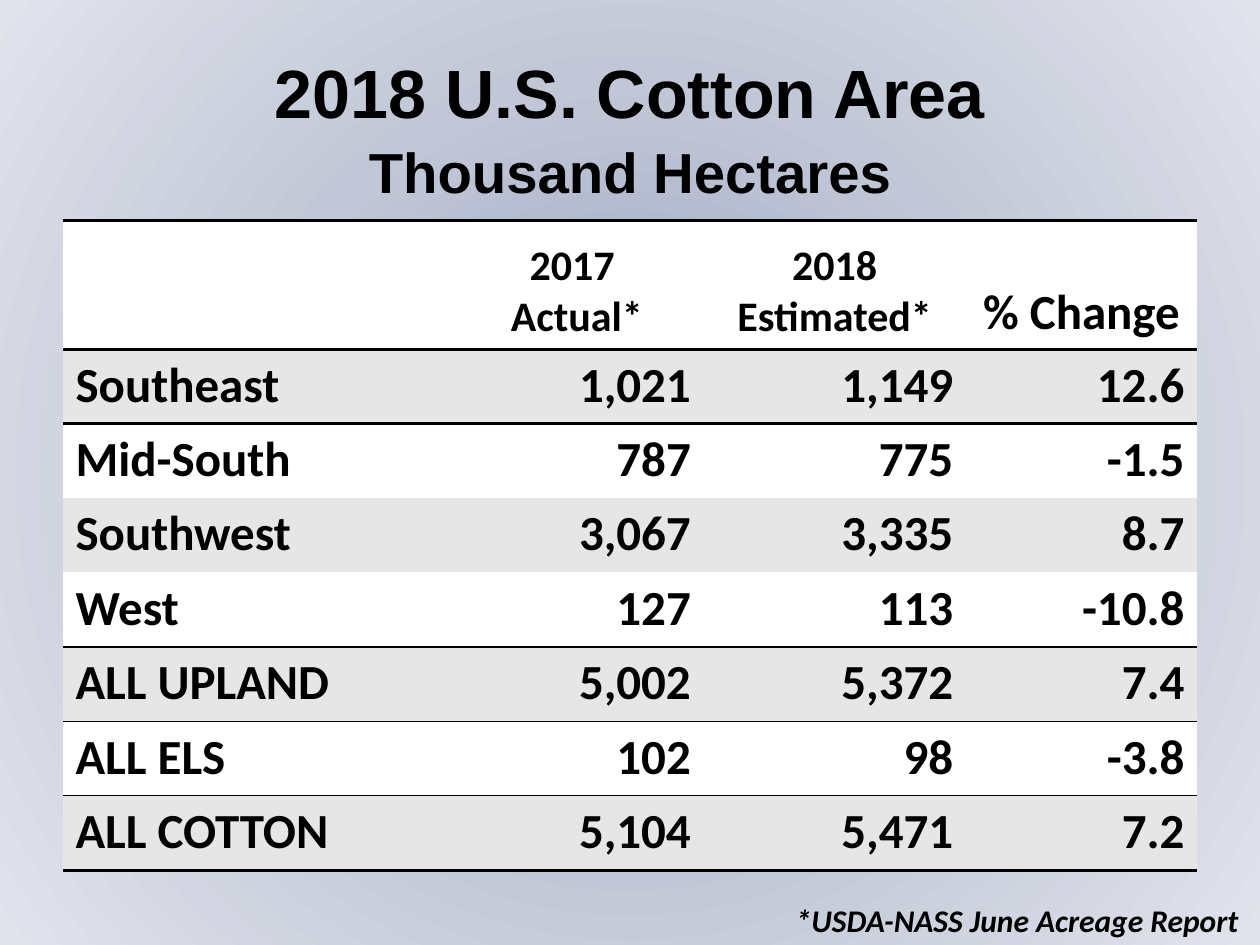
from pptx import Presentation
from pptx.dml.color import RGBColor
from pptx.enum.text import MSO_ANCHOR as Anchor, PP_ALIGN as Align
from pptx.oxml import parse_xml
from pptx.oxml.ns import nsdecls, qn
from pptx.util import Cm, Pt

COLORS = {"ink": "000000", "plain": "FFFFFF", "band": "E6E6E6",
          "center": "98A3C1", "middle": "C2C7D7", "edge": "E1E4EB"}
NO_STYLE = "{2D5ABB26-0587-4C30-8999-92F81FD0307C}"
HEADER = ["", "2017\n Actual*", "2018 Estimated*", "% Change"]
REGIONS = [
    ["Southeast", "1,021", "1,149", "12.6"],
    ["Mid-South", "787", "775", "-1.5"],
    ["Southwest", "3,067", "3,335", "8.7"],
    ["West", "127", "113", "-10.8"],
    ["ALL UPLAND", "5,002", "5,372", "7.4"],
    ["ALL ELS", "102", "98", "-3.8"],
    ["ALL COTTON", "5,104", "5,471", "7.2"],
]
COLUMN_WIDTHS = [7.62, 5.29, 5.29, 4.66]
HEADER_HEIGHT, ROW_HEIGHT = 2.59, 1.5
RULES = {0: 2, 1: 2, 5: 1, 7: 1, 8: 2}


def apply_format(target, values):
    for name, value in values.items():
        setattr(target, name, value)


def write_text(para, text, align, size, font, **extra):
    para.alignment = align
    span = para.add_run()
    span.text = text
    apply_format(span.font, {"size": Pt(size), "name": font, "bold": True, **extra})
    span.font.color.rgb = RGBColor.from_string(COLORS["ink"])


def add_frame(page, box, **values):
    frame = page.shapes.add_textbox(*map(Cm, box)).text_frame
    apply_format(frame, {"word_wrap": True, **values})
    return frame


def paint_background(page):
    page.background.fill.solid()
    properties = page._element.find(".//" + qn("p:bgPr"))
    stops = "".join(
        f'<a:gs pos="{place * 1000}"><a:srgbClr val="{COLORS[name]}"/></a:gs>'
        for place, name in [(0, "center"), (50, "middle"), (100, "edge")])
    gradient = parse_xml(
        f'<a:gradFill {nsdecls("a")} rotWithShape="1"><a:gsLst>{stops}</a:gsLst>'
        '<a:path path="circle"><a:fillToRect l="50000" t="50000" r="50000" b="50000"/>'
        '</a:path></a:gradFill>')
    properties.replace(properties[0], gradient)


def add_title(page, box):
    frame = add_frame(page, box, margin_top=Cm(0.25), vertical_anchor=Anchor.TOP)
    write_text(frame.paragraphs[0], "2018 U.S. Cotton Area", Align.CENTER, 39, "Arial")
    subtitle = frame.add_paragraph()
    subtitle.space_before = Pt(3)
    write_text(subtitle, "Thousand Hectares", Align.CENTER, 32.2, "Arial")


def add_rule(cell, side, weight):
    cell._tc.get_or_add_tcPr().insert(0, parse_xml(
        f'<a:{side} {nsdecls("a")} w="{Pt(weight)}"><a:solidFill>'
        f'<a:srgbClr val="{COLORS["ink"]}"/></a:solidFill></a:{side}>'))


def fill_cell(cell, text, row, column):
    cell.fill.solid()
    cell.fill.fore_color.rgb = RGBColor.from_string(COLORS["band" if row % 2 else "plain"])
    for side, edge in [("lnB", row + 1), ("lnT", row)]:
        if edge in RULES:
            add_rule(cell, side, RULES[edge])
    if row == 0:
        cell.vertical_anchor = Anchor.BOTTOM
        align, size = Align.CENTER, 28 if column == 3 else 24
    else:
        align, size = Align.RIGHT if column else Align.LEFT, 28
    if not text:
        return
    frame = cell.text_frame
    for index, line in enumerate(text.split("\n")):
        para = frame.add_paragraph() if index else frame.paragraphs[0]
        write_text(para, line, align, size, "Calibri")


def add_area_table(page, box):
    rows = [HEADER] + REGIONS
    table = page.shapes.add_table(len(rows), len(HEADER), *map(Cm, box)).table
    apply_format(table, {"first_row": False, "horz_banding": False})
    table._tbl.tblPr.find(qn("a:tableStyleId")).text = NO_STYLE
    for column, width in zip(table.columns, COLUMN_WIDTHS):
        column.width = Cm(width)
    for row, texts in enumerate(rows):
        table.rows[row].height = Cm(ROW_HEIGHT if row else HEADER_HEIGHT)
        for column, text in enumerate(texts):
            fill_cell(table.cell(row, column), text, row, column)


def add_source_note(page, box):
    frame = add_frame(page, box, margin_right=Cm(0.43))
    write_text(frame.paragraphs[0], "*USDA-NASS June Acreage Report",
               Align.RIGHT, 18, "Calibri", italic=True)


def main():
    deck = Presentation()
    apply_format(deck, {"slide_width": Cm(25.4), "slide_height": Cm(19.05)})
    page = deck.slides.add_slide(deck.slide_layouts[6])
    paint_background(page)
    add_title(page, (1.27, 0.76, 22.86, 3.18))
    table_height = HEADER_HEIGHT + ROW_HEIGHT * len(REGIONS)
    add_area_table(page, (1.27, 4.45, sum(COLUMN_WIDTHS), table_height))
    add_source_note(page, (9.63, 18.03, 15.77, 1.02))
    deck.save("out.pptx")


if __name__ == "__main__":
    main()
